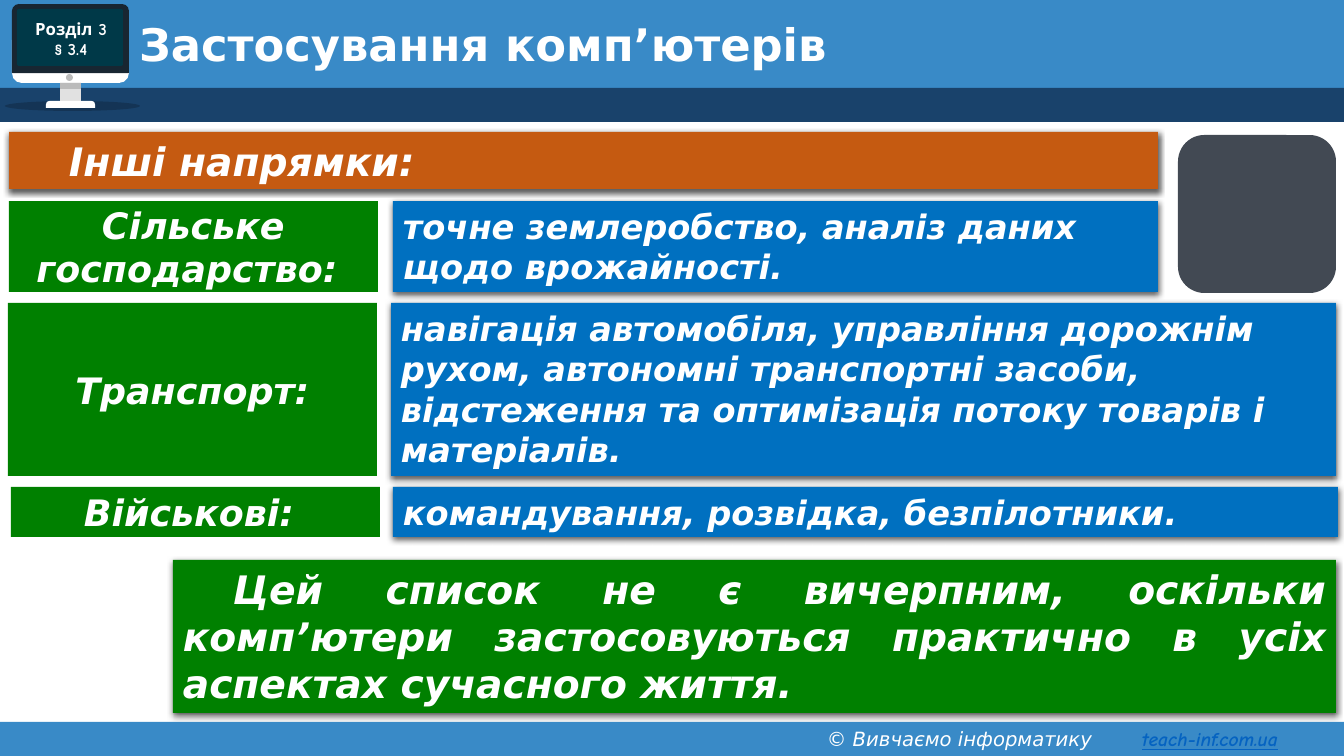
from lxml import etree
from pptx import Presentation
from pptx import util as u
from pptx.dml.color import RGBColor
from pptx.enum import shapes, text
from pptx.oxml.ns import qn

SCALE = 12192000 / 1344  # EMU in one px
SANS, COMIC = "DejaVu Sans", "Comic Neue"
WHITE, GREEN, BLUE, ORANGE = "FFFFFF", "008000", "0070C0", "C55A11"
SKY, NAVY, LINK = "398AC7", "19426B", "0563C1"
LEFT, CENTER, JUSTIFY = text.PP_ALIGN.LEFT, text.PP_ALIGN.CENTER, text.PP_ALIGN.JUSTIFY
RECT, ROUND = shapes.MSO_SHAPE.RECTANGLE, shapes.MSO_SHAPE.ROUNDED_RECTANGLE
OVAL, ROUND_SIDE = shapes.MSO_SHAPE.OVAL, shapes.MSO_SHAPE.ROUND_2_SAME_RECTANGLE


def px(value):
    return u.Emu(round(value * SCALE))


def rgb(color):
    return RGBColor.from_string(color)


def add_figure(slide, kind, box, color, adjustments=()):
    shape = slide.shapes.add_shape(kind, *map(px, box))
    shape.shadow.inherit = False
    shape.fill.solid()
    shape.fill.fore_color.rgb = rgb(color)
    shape.line.fill.background()
    for index, value in enumerate(adjustments):
        shape.adjustments[index] = value
    return shape


def set_alpha(color_element, percent):
    etree.SubElement(color_element, qn("a:alpha"), val=str(percent * 1000))


def add_shadow(shape):
    effects = shape._element.spPr.find(qn("a:effectLst"))
    shadow = etree.SubElement(effects, qn("a:outerShdw"), blurRad="57150", dist="19050",
                              dir="5400000", algn="ctr", rotWithShape="0")
    set_alpha(etree.SubElement(shadow, qn("a:srgbClr"), val="000000"), 63)


def add_run(paragraph, words, size, font=SANS, color=WHITE, bold=True, italic=False):
    run = paragraph.add_run()
    run.text = words
    run.font.size = u.Pt(size)
    run.font.name = font
    run.font.bold = bold
    run.font.italic = italic
    run.font.color.rgb = rgb(color)
    return run


def add_panel(slide, box, color, words, size, align=LEFT, indent=0, shadow=True):
    shape = add_figure(slide, RECT, box, color)
    if shadow:
        add_shadow(shape)
    frame = shape.text_frame
    frame.word_wrap = True
    frame.vertical_anchor = text.MSO_ANCHOR.TOP if shadow else text.MSO_ANCHOR.MIDDLE
    paragraph = frame.paragraphs[0]
    paragraph.alignment = align
    if indent:
        paragraph._p.get_or_add_pPr().set("indent", str(px(indent)))
    add_run(paragraph, words, size, italic=True)


def add_text_box(slide, box, anchor):
    frame = slide.shapes.add_textbox(*map(px, box)).text_frame
    frame.word_wrap = True
    frame.vertical_anchor = anchor
    return frame


def add_monitor(slide):
    floor = add_figure(slide, OVAL, (5, 101, 135, 10), "000000")
    set_alpha(floor._element.spPr.find(qn("a:solidFill"))[0], 20)
    add_figure(slide, ROUND_SIDE, (12, 40, 117, 43), WHITE, (0, 0.23))
    add_figure(slide, ROUND_SIDE, (12, 4, 117, 69), "182632", (0.1, 0))
    add_figure(slide, RECT, (60, 83, 21, 18), "E1E1E1")
    add_figure(slide, RECT, (60, 83, 21, 6), "BBBBBB")
    add_figure(slide, ROUND_SIDE, (46, 101, 49, 7), WHITE, (0.5, 0))
    add_figure(slide, OVAL, (66, 74, 7, 7), "BBBBBB")
    add_figure(slide, ROUND, (17, 9, 106, 57), "003948", (0.036,))

    frame = add_text_box(slide, (13, 9, 116, 59), text.MSO_ANCHOR.MIDDLE)
    for index, words in enumerate(("Розділ 3", "§ 3.4")):
        paragraph = frame.add_paragraph() if index else frame.paragraphs[0]
        paragraph.alignment = CENTER
        add_run(paragraph, words, 12, COMIC)


def add_footer(slide):
    add_figure(slide, RECT, (0, 722, 1344, 34), SKY)
    frame = add_text_box(slide, (817, 722, 527, 34), text.MSO_ANCHOR.TOP)
    paragraph = frame.paragraphs[0]
    tabs = etree.SubElement(paragraph._p.get_or_add_pPr(), qn("a:tabLst"))
    etree.SubElement(tabs, qn("a:tab"), pos=str(px(315)), algn="l")
    add_run(paragraph, "© Вивчаємо інформатику\t", 14, bold=False, italic=True)
    link = add_run(paragraph, "teach-inf.com.ua", 14, COMIC, LINK, italic=True)
    link.font.underline = True


def set_title(slide, words):
    title = slide.shapes.title
    title.left, title.top, title.width, title.height = map(px, (129, 18, 1181, 58))
    frame = title.text_frame
    frame.word_wrap = True
    frame.vertical_anchor = text.MSO_ANCHOR.MIDDLE
    paragraph = frame.paragraphs[0]
    paragraph.alignment = LEFT
    paragraph.line_spacing = 0.9
    add_run(paragraph, words, 32)
    # Bring the title in front of the header bands
    slide.shapes._spTree.append(title._element)


def main():
    presentation = Presentation()
    presentation.slide_width, presentation.slide_height = px(1344), px(756)
    slide = presentation.slides.add_slide(presentation.slide_layouts[5])

    # Header and footer
    add_figure(slide, RECT, (0, 0, 1344, 92), SKY)
    add_figure(slide, RECT, (0, 88, 1344, 34), NAVY)
    add_monitor(slide)
    add_footer(slide)
    set_title(slide, "Застосування комп’ютерів")

    # Fields of use: label on the left, description on the right
    add_panel(slide, (9, 132, 1149, 57), ORANGE, "Інші напрямки:", 28, JUSTIFY, 50)
    fields = [
        (9, 393, 201, 765, 91, "Сільське господарство: ",
         "точне землеробство, аналіз даних щодо врожайності."),
        (8, 391, 303, 945, 173, "Транспорт:",
         "навігація автомобіля, управління дорожнім рухом, автономні транспортні "
         "засоби, відстеження та оптимізація потоку товарів і матеріалів."),
        (11, 393, 487, 945, 50, "Військові: ", "командування, розвідка, безпілотники."),
    ]
    for label_left, left, top, width, height, label, description in fields:
        add_panel(slide, (left, top, width, height), BLUE, description, 24)
        add_panel(slide, (label_left, top, 369, height), GREEN, label, 26, CENTER, shadow=False)

    # Conclusion and icon tile
    add_panel(slide, (173, 560, 1163, 153), GREEN,
              "Цей список не є вичерпним, оскільки комп’ютери застосовуються "
              "практично в усіх аспектах сучасного життя.", 28, JUSTIFY, 50)
    add_figure(slide, ROUND, (1178, 135, 158, 158), "424953", (0.167,))

    presentation.save("out.pptx")


if __name__ == "__main__":
    main()
